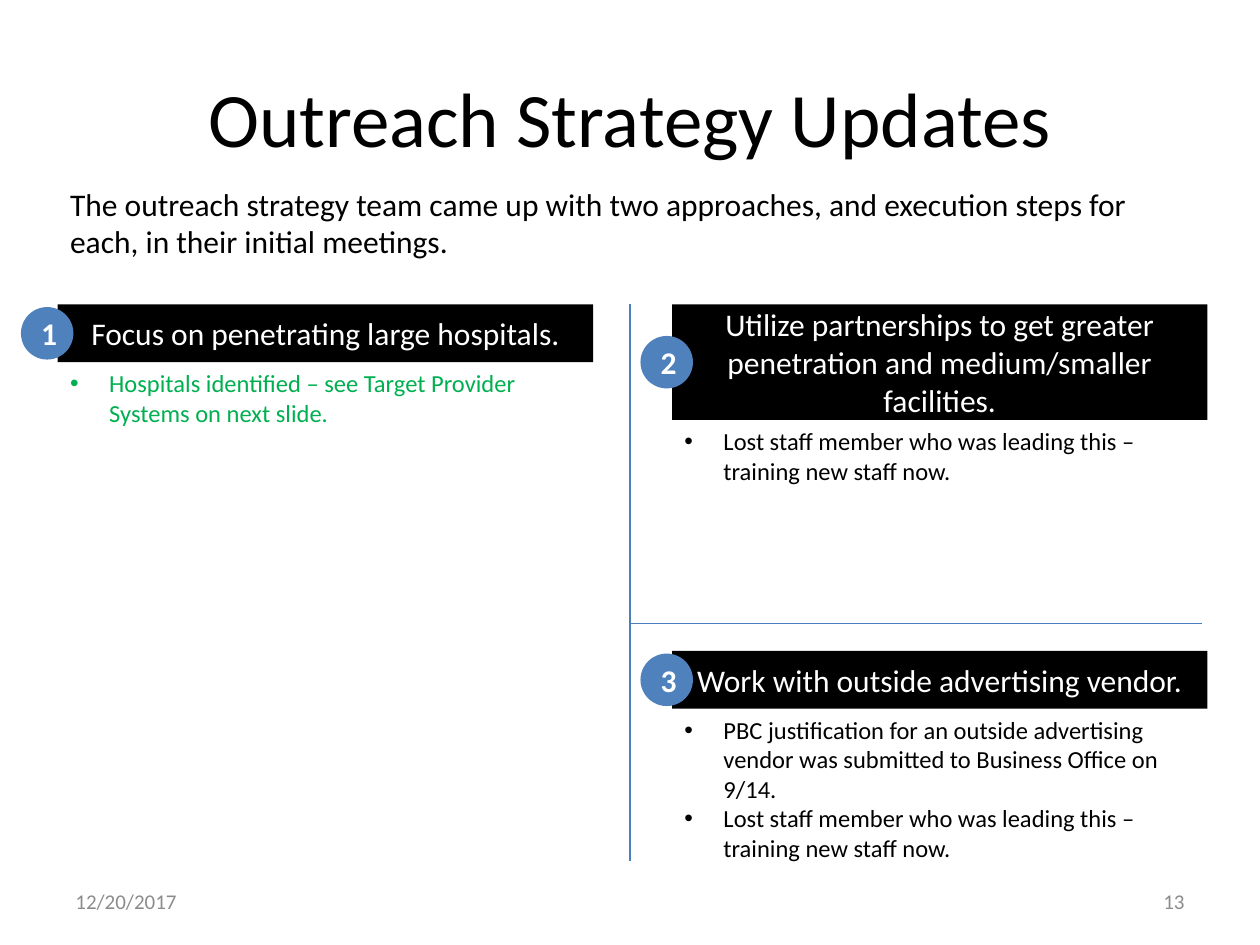
from lxml.etree import SubElement
from pptx import Presentation
from pptx.dml.color import RGBColor
from pptx.enum.shapes import MSO_CONNECTOR, MSO_SHAPE
from pptx.enum.text import MSO_ANCHOR, PP_ALIGN
from pptx.oxml.ns import qn
from pptx.util import Inches, Pt

BLACK = RGBColor(0x00, 0x00, 0x00)
WHITE = RGBColor(0xFF, 0xFF, 0xFF)
GREY = RGBColor(0x8C, 0x8C, 0x8C)
GREEN = RGBColor(0x00, 0xB0, 0x50)
BLUE = RGBColor(0x4F, 0x81, 0xBD)
RULE = RGBColor(0x4B, 0x7E, 0xBC)

COLS = 24
WIDTH, HEIGHT = Inches(10), Inches(7.5)
CELL = WIDTH / COLS  # square cells: 24 columns by 18 rows
BAR = 1.1
PANEL = 10.2


def cells(*counts):
    return [round(count * CELL) for count in counts]


class Board:
    """Holds the font and the slide; all lengths are in grid cells."""

    def __init__(self, slide, font="Calibri"):
        self.slide = slide
        self.font = font

    def fill_text(self, frame, lines, size, color, align, anchor, bold=False):
        frame.word_wrap = True
        frame.vertical_anchor = anchor
        for i, line in enumerate(lines):
            para = frame.paragraphs[0] if i == 0 else frame.add_paragraph()
            para.text = line
            para.alignment = align
            para.font.name = self.font
            para.font.size = Pt(size)
            para.font.bold = bold
            para.font.color.rgb = color

    def text(self, box, lines, size, color=BLACK, align=PP_ALIGN.LEFT,
             anchor=MSO_ANCHOR.MIDDLE):
        frame = self.slide.shapes.add_textbox(*cells(*box)).text_frame
        self.fill_text(frame, lines, size, color, align, anchor)
        return frame

    def bullets(self, box, lines, color):
        frame = self.text(box, lines, 14, color, anchor=MSO_ANCHOR.TOP)
        indent = Inches(0.31)
        for para in frame.paragraphs:
            props = para._p.get_or_add_pPr()
            props.set("marL", str(indent))
            props.set("indent", str(-indent))
            bullet = props.makeelement(qn("a:buChar"), {"char": "•"})
            face = props.makeelement(qn("a:buFont"), {"typeface": "Arial"})
            props.insert(0, bullet)
            props.insert(0, face)

    def block(self, kind, box, label, fill, bold=False):
        shape = self.slide.shapes.add_shape(kind, *cells(*box))
        shape.shadow.inherit = False
        shape.fill.solid()
        shape.fill.fore_color.rgb = fill
        shape.line.fill.background()
        self.fill_text(shape.text_frame, [label], 18, WHITE, PP_ALIGN.CENTER,
                       MSO_ANCHOR.MIDDLE, bold)
        return shape

    def badge(self, left, top, label):
        shape = self.block(MSO_SHAPE.OVAL, (left, top, 1, 1), label, BLUE, True)
        shape.text_frame.margin_left = Inches(0.03)
        shape.text_frame.margin_right = 0

    def line(self, *ends):
        rule = self.slide.shapes.add_connector(MSO_CONNECTOR.STRAIGHT, *cells(*ends))
        rule.line.color.rgb = RULE
        rule.line.width = Pt(0.75)
        SubElement(rule._element.spPr, qn("a:effectLst"))

    def panel(self, num, left, top, rows, gap, head, notes, depth, color=BLACK):
        """Heading bar with a badge hanging off its left edge and bullets below."""
        high = rows * BAR
        self.block(MSO_SHAPE.RECTANGLE, (left, top, PANEL, high), head, BLACK)
        self.bullets((left, top + high, PANEL, depth), notes, color)
        self.badge(left - gap, top + high / 2 - 0.5, str(num))


def main():
    deck = Presentation()
    deck.slide_width, deck.slide_height = WIDTH, HEIGHT
    board = Board(deck.slides.add_slide(deck.slide_layouts[6]))

    board.text((1.2, 0.72, 21.6, 3), ["Outreach Strategy Updates"], 44,
               align=PP_ALIGN.CENTER)
    board.text((1.1, 3.4, 21.8, 1.7),
               ["The outreach strategy team came up with two approaches, "
                "and execution steps for each, in their initial meetings."],
               18, anchor=MSO_ANCHOR.TOP)

    board.line(12, 16.4, 12, 5.8)
    board.line(12, 11.88, 22.9, 11.88)

    staff = "Lost staff member who was leading this – training new staff now."
    board.panel(1, 1.1, 5.8, 1, 0.7, "Focus on penetrating large hospitals.",
                ["Hospitals identified – see Target Provider Systems on next slide."],
                1.37, GREEN)
    board.panel(2, 12.8, 5.8, 2, 0.6,
                "Utilize partnerships to get greater penetration and "
                "medium/smaller facilities.", [staff], 1.37)
    board.panel(3, 12.8, 12.4, 1, 0.6, "Work with outside advertising vendor.",
                ["PBC justification for an outside advertising vendor was "
                 "submitted to Business Office on 9/14.", staff], 3.07)

    board.text((1.2, 16.68, 5.6, 0.96), ["12/20/2017"], 12, GREY)
    board.text((17.2, 16.68, 5.6, 0.96), ["13"], 12, GREY, PP_ALIGN.RIGHT)

    deck.save("out.pptx")


if __name__ == "__main__":
    main()
